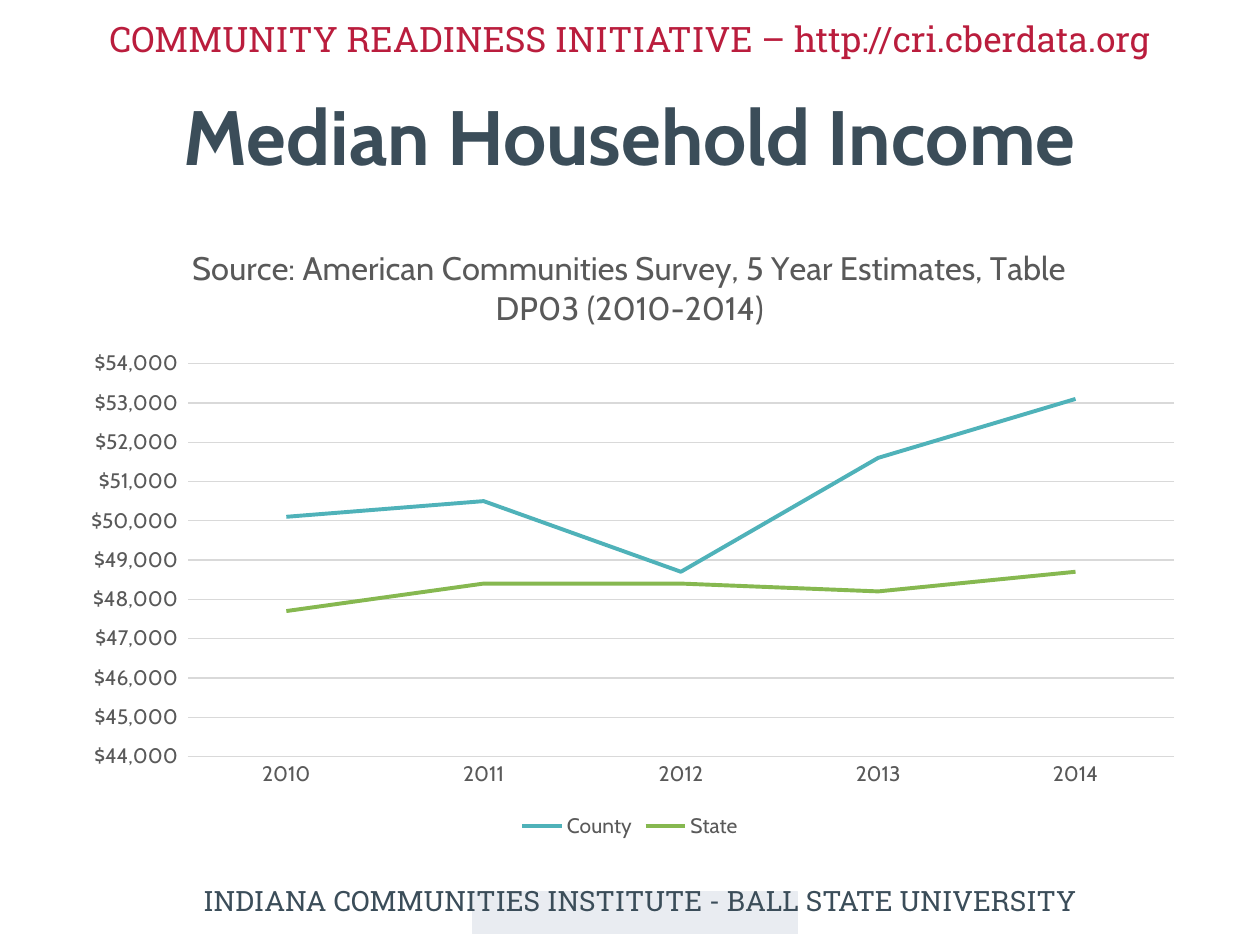
from lxml.etree import SubElement
from pptx import Presentation
from pptx.chart.data import CategoryChartData
from pptx.dml.color import RGBColor
from pptx.enum.chart import XL_CHART_TYPE, XL_LEGEND_POSITION, XL_TICK_MARK
from pptx.enum.shapes import MSO_SHAPE
from pptx.enum.text import MSO_ANCHOR, PP_ALIGN
from pptx.oxml.ns import qn
from pptx.util import Inches, Pt

SLATE = RGBColor(0x3B, 0x4D, 0x59)
CRIMSON = RGBColor(0xBA, 0x1D, 0x3D)
PALE = RGBColor(0xE9, 0xEC, 0xF1)
GRAY = RGBColor(0x59, 0x59, 0x59)
GRID = RGBColor(0xD9, 0xD9, 0xD9)
TEAL = RGBColor(0x4F, 0xB2, 0xB9)
GREEN = RGBColor(0x86, 0xB8, 0x50)

HEADING_FONT, BODY_FONT = "Roboto Slab", "Cabin"

YEARS = ["2010", "2011", "2012", "2013", "2014"]
INCOMES = {
    "County": (TEAL, [50100, 50500, 48700, 51600, 53100]),
    "State": (GREEN, [47700, 48400, 48400, 48200, 48700]),
}


def style_font(font, size, color, name=BODY_FONT, bold=False):
    font.size, font.name, font.bold = Pt(size), name, bold
    font.color.rgb = color


def style_line(line, color, width=0.75):
    line.color.rgb = color
    line.width = Pt(width)


def write(frame, text, anchor=MSO_ANCHOR.TOP, **font_format):
    frame.word_wrap = True
    frame.vertical_anchor = anchor
    paragraph = frame.paragraphs[0]
    paragraph.alignment = PP_ALIGN.CENTER
    run = paragraph.add_run()
    run.text = text
    style_font(run.font, **font_format)


class IncomeSlide:
    """Places elements by shares of the slide's width and height."""

    def __init__(self, width=10, height=7.5):
        self.deck = Presentation()
        self.deck.slide_width, self.deck.slide_height = Inches(width), Inches(height)
        self.slide = self.deck.slides.add_slide(self.deck.slide_layouts[6])

    def area(self, left, top, width, height):
        across, down = self.deck.slide_width, self.deck.slide_height
        return (round(left * across), round(top * down),
                round(width * across), round(height * down))

    def band(self, color, *shares):
        band = self.slide.shapes.add_shape(MSO_SHAPE.RECTANGLE, *self.area(*shares))
        band.shadow.inherit = False
        band.fill.solid()
        band.fill.fore_color.rgb = color
        style_line(band.line, color)

    def text(self, words, *shares, **text_format):
        box = self.slide.shapes.add_textbox(*self.area(*shares))
        write(box.text_frame, words, **text_format)

    def line_chart(self, title, categories, series, *shares):
        data = CategoryChartData(number_format='"$"#,##0_)')
        data.categories = categories
        for name, (_, values) in series.items():
            data.add_series(name, values)
        chart = self.slide.shapes.add_chart(
            XL_CHART_TYPE.LINE, *self.area(*shares), data).chart
        style_font(chart.font, 12, GRAY)

        # Title and legend
        chart.has_title = True
        write(chart.chart_title.text_frame, title, size=18.6, color=GRAY)
        chart.chart_title.include_in_layout = False
        chart.has_legend = True
        chart.legend.position = XL_LEGEND_POSITION.BOTTOM
        chart.legend.include_in_layout = False
        style_font(chart.legend.font, 12, GRAY)

        # Axes
        years, dollars = chart.category_axis, chart.value_axis
        for axis in (years, dollars):
            axis.major_tick_mark = axis.minor_tick_mark = XL_TICK_MARK.NONE
            style_font(axis.tick_labels.font, 12, GRAY)
        style_line(years.format.line, GRID)
        dollars.format.line.fill.background()
        dollars.minimum_scale, dollars.maximum_scale = 44000, 54000
        dollars.major_unit = 1000
        dollars.tick_labels.number_format = '"$"#,##0_)'
        dollars.tick_labels.number_format_is_linked = False
        dollars.has_major_gridlines = True
        style_line(dollars.major_gridlines.format.line, GRID)

        # Series
        plot = chart.plots[0]
        plot.vary_by_categories = False
        for income, (color, _) in zip(plot.series, series.values()):
            income.smooth = False
            style_line(income.format.line, color, 2.25)

        self.fix_plot_area(chart, x=0.11, y=0.23, w=0.87, h=0.63)

    def fix_plot_area(self, chart, **shares):
        plot_area = chart.plots[0]._element.getparent()
        layout = plot_area.find(qn("c:layout"))
        if layout is None:
            layout = SubElement(plot_area, qn("c:layout"))
            plot_area.insert(0, layout)
        manual = SubElement(layout, qn("c:manualLayout"))
        settings = {"layoutTarget": "inner", "xMode": "edge", "yMode": "edge", **shares}
        for tag, value in settings.items():
            SubElement(manual, qn(f"c:{tag}")).set("val", str(value))


def main():
    page = IncomeSlide()

    # Footer and header
    page.band(PALE, 0.375, 0.944, 0.258, 0.044)
    page.text("INDIANA COMMUNITIES INSTITUTE - BALL STATE UNIVERSITY",
              0.058, 0.928, 0.9, 0.05, size=16, color=SLATE, name=HEADING_FONT)
    page.text("COMMUNITY READINESS INITIATIVE – http://cri.cberdata.org",
              0.008, 0.012, 0.984, 0.058, size=20, color=CRIMSON, name=HEADING_FONT)

    # Title
    page.text("Median Household Income", 0.05, 0.078, 0.9, 0.13,
              anchor=MSO_ANCHOR.MIDDLE, size=44, color=SLATE, bold=True)

    # Income by year
    page.line_chart(
        "Source: American Communities Survey, 5 Year Estimates, Table DP03 (2010-2014)",
        YEARS, INCOMES, 0.05, 0.233, 0.9, 0.66)

    page.deck.save("out.pptx")


if __name__ == "__main__":
    main()
